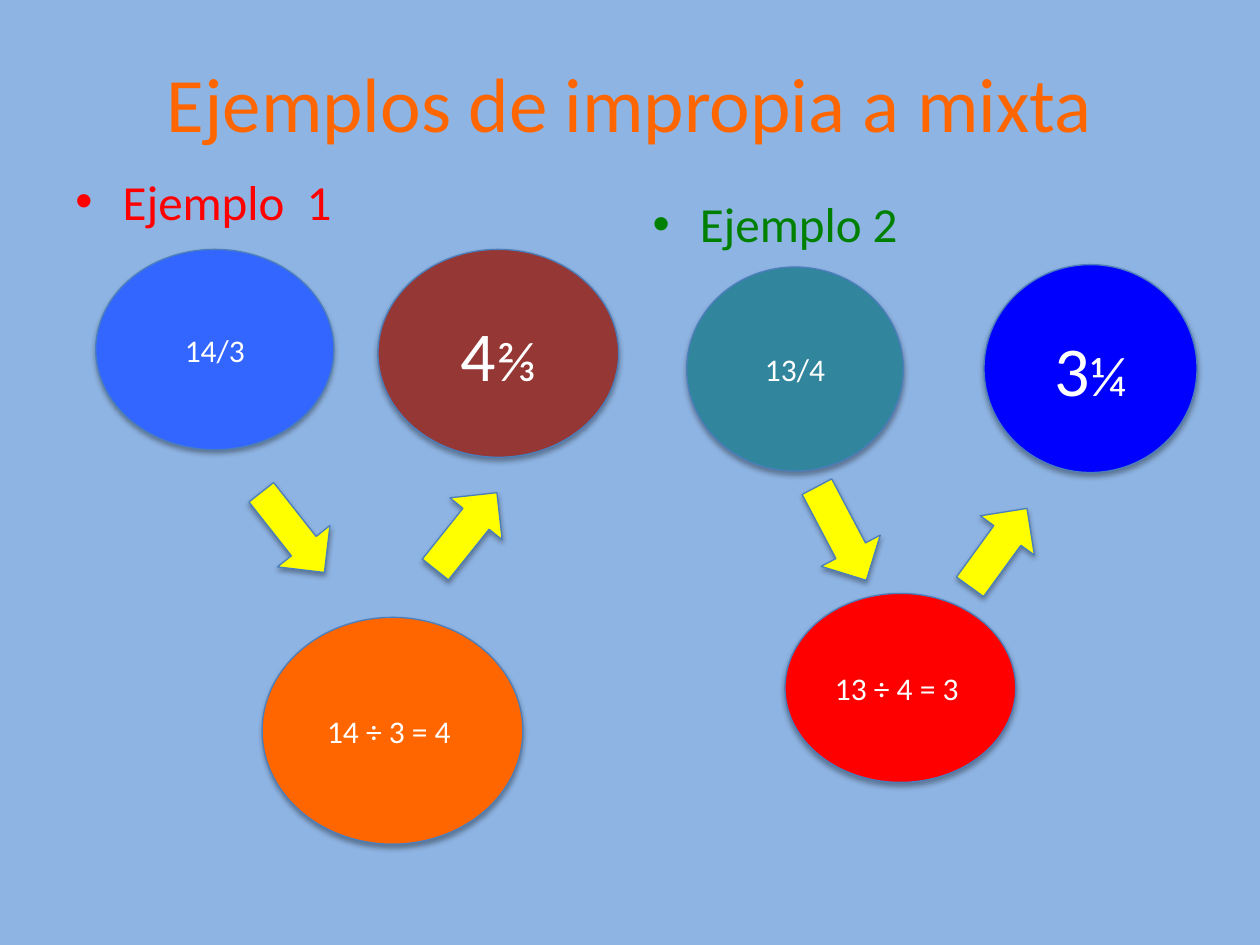
from lxml import etree
from pptx import Presentation
from pptx.dml.color import RGBColor
from pptx.enum.shapes import MSO_SHAPE
from pptx.enum.text import MSO_ANCHOR, PP_ALIGN
from pptx.oxml import parse_xml
from pptx.oxml.ns import nsdecls, qn
from pptx.util import Pt

ARROW_HEIGHT = 38.2

# Each example: box, heading, heading colour, circles and arrows.
# A circle is (left, top, width, height), fill, [(text, size), ...];
# an arrow is (left, top, width), rotation, shaft share of its height.
EXAMPLES = [
    ((36, 94.3, 318.2, 406.8), "Ejemplo  1", "FF0000",
     [((18.7, 48.2, 136.1, 114.5), "3366FF", [("14/3", 18)]),
      ((180, 48.2, 137.5, 118.8), "953735", [("4", 40), ("⅔", 32)]),
      ((113.8, 258.5, 149, 129.6), "FF6600", [("14 ÷ 3 = 4 ", 18)])],
     [((202.3, 190.1, 56.2), 308.7, 0.5), ((102.2, 190.8, 58.3), 51.8, 0.47)]),
    ((365.8, 107.3, 318.2, 375.1), "Ejemplo 2", "008000",
     [((26.6, 45.3, 123.8, 116.6), "31859C", [("13/4", 18)]),
      ((196.5, 43.9, 121.7, 118.8), "0000FF", [("3", 40), ("¼", 32)]),
      ((82.8, 231.8, 131.8, 108), "FF0000", [("13 ÷ 4 = 3 ", 18)])],
     [((177.1, 186.5, 55.4), 306, 0.5), ((84.9, 178.5, 60.5), 62.2, 0.5)]),
]


def color(hex_string):
    return RGBColor.from_string(hex_string)


def style_font(font, size, hex_string):
    font.name = "Calibri"
    font.size = Pt(size)
    font.color.rgb = color(hex_string)


def add_text(slide, box, text, size, hex_string):
    frame = slide.shapes.add_textbox(*map(Pt, box)).text_frame
    frame.word_wrap = True
    frame.text = text
    style_font(frame.paragraphs[0].runs[0].font, size, hex_string)
    return frame


def add_title(slide, box):
    title = add_text(slide, box, "Ejemplos de impropia a mixta", 44, "FF6600")
    title.vertical_anchor = MSO_ANCHOR.MIDDLE
    title.paragraphs[0].alignment = PP_ALIGN.CENTER


def add_heading(slide, box, text, hex_string):
    heading = add_text(slide, box, text, 28, hex_string)
    properties = heading.paragraphs[0]._p.get_or_add_pPr()
    properties.set("marL", str(Pt(27)))
    properties.set("indent", str(-Pt(27)))
    etree.SubElement(properties, qn("a:buFont"), typeface="Arial")
    etree.SubElement(properties, qn("a:buChar"), char="•")


def add_shadowed(slide, preset, box, fill):
    """Add a filled shape with a thin outline and a soft shadow below."""
    shape = slide.shapes.add_shape(preset, *map(Pt, box))
    shape.fill.solid()
    shape.fill.fore_color.rgb = color(fill)
    shape.line.color.rgb = color("4B7EBC")
    shape.line.width = Pt(0.75)
    shape._element.spPr.append(parse_xml(
        f'<a:effectLst {nsdecls("a")}><a:outerShdw blurRad="{Pt(3.1)}" '
        f'dist="{Pt(1.8)}" dir="5400000" rotWithShape="0">'
        '<a:srgbClr val="000000"><a:alpha val="35000"/></a:srgbClr>'
        '</a:outerShdw></a:effectLst>'))
    return shape


def add_circle(slide, box, fill, parts):
    frame = add_shadowed(slide, MSO_SHAPE.OVAL, box, fill).text_frame
    frame.word_wrap = True
    frame.vertical_anchor = MSO_ANCHOR.MIDDLE
    paragraph = frame.paragraphs[0]
    paragraph.alignment = PP_ALIGN.CENTER
    for text, size in parts:
        run = paragraph.add_run()
        run.text = text
        style_font(run.font, size, "FFFFFF")


def add_arrow(slide, box, rotation, shaft):
    arrow = add_shadowed(slide, MSO_SHAPE.RIGHT_ARROW, box, "FFFF00")
    arrow.rotation = rotation
    arrow.adjustments[0] = shaft


def add_example(slide, box, heading, heading_color, circles, arrows):
    left, top = box[:2]
    add_heading(slide, box, heading, heading_color)
    for (x, y, width, height), fill, parts in circles:
        add_circle(slide, (left + x, top + y, width, height), fill, parts)
    for (x, y, width), rotation, shaft in arrows:
        add_arrow(slide, (left + x, top + y, width, ARROW_HEIGHT), rotation, shaft)


def main():
    presentation = Presentation()
    presentation.slide_width = Pt(720)
    presentation.slide_height = Pt(540)
    slide = presentation.slides.add_slide(presentation.slide_layouts[6])
    slide.background.fill.solid()
    slide.background.fill.fore_color.rgb = color("8EB4E3")
    add_title(slide, (36, 21.6, 648, 72.7))
    for example in EXAMPLES:
        add_example(slide, *example)
    presentation.save("out.pptx")


if __name__ == "__main__":
    main()
